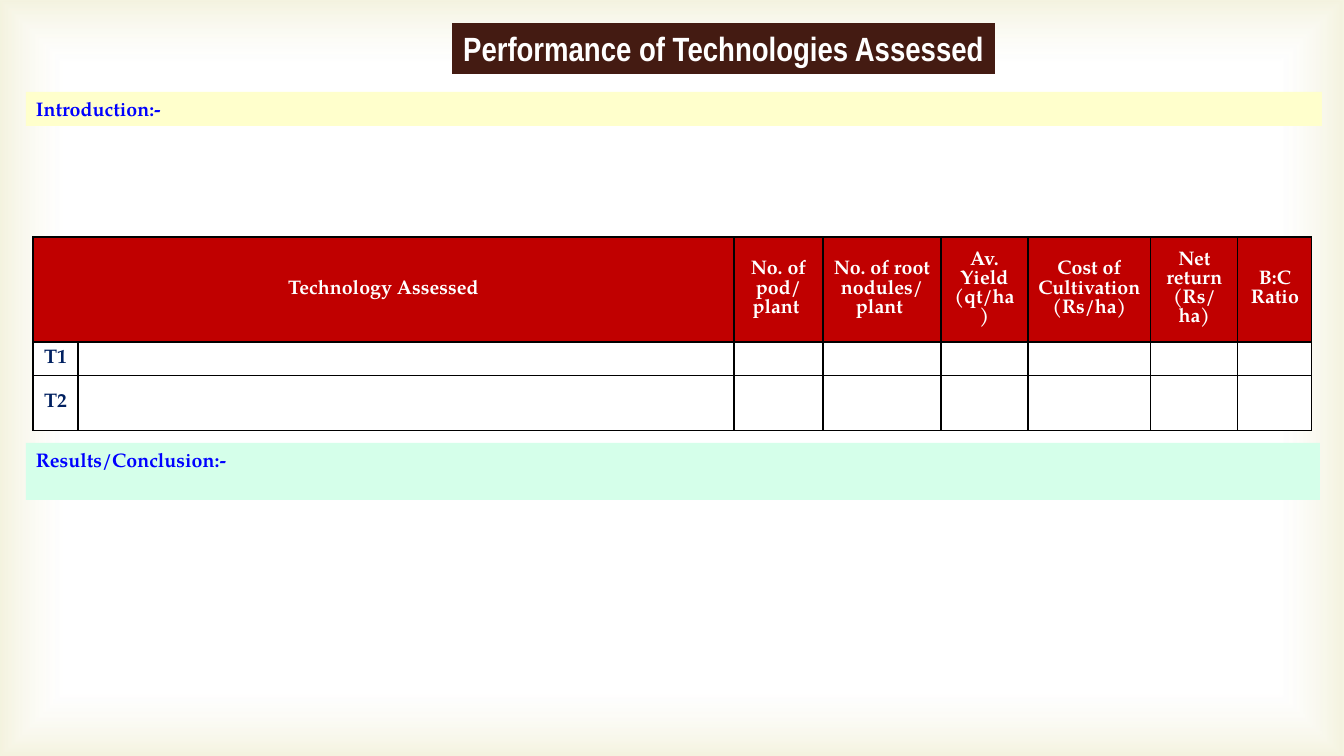
import pptx
import pptx.util
import pptx.oxml
import pptx.oxml.ns
import pptx.dml.color
import pptx.enum.text
import pptx.enum.shapes

RGB = pptx.dml.color.RGBColor
ALIGN = pptx.enum.text.PP_ALIGN
ANCHOR = pptx.enum.text.MSO_ANCHOR
WHITE = RGB(0xFF, 0xFF, 0xFF)
BLACK = RGB(0, 0, 0)
BROWN = RGB(0x44, 0x1B, 0x12)
CREAM = RGB(0xFF, 0xFF, 0xCC)
MINT = RGB(0xD5, 0xFF, 0xEA)
BLUE = RGB(0, 0, 0xFF)
NAVY = RGB(0, 0x20, 0x60)
RED = RGB(0xC0, 0, 0)
SAND = RGB(0xD1, 0xCA, 0x75)
SERIF = "TeX Gyre Pagella"
NS = pptx.oxml.ns.nsdecls("a")
WIDE, HIGH = 1344, 756

COLS = [45, 656, 89, 118, 87, 123, 87, 74]
ROWS = [105, 33, 55]
HEADS = ["Technology Assessed", "", "No. of pod/ plant ",
         "No. of root nodules/ plant ", "Av. Yield (qt/ha)",
         "Cost of Cultivation (Rs/ha)", "Net return\n(Rs/ha)", "B:C Ratio"]
NAMES = ["T1 ", "T2"]


def px(num):
    return pptx.util.Emu(round(num * 12192000 / WIDE))


def place(shape, left, top, width, height):
    shape.left, shape.top = px(left), px(top)
    shape.width, shape.height = px(width), px(height)


def paint(item, color):
    item.fill.solid()
    item.fill.fore_color.rgb = color


def style(para, color, size=14, name=SERIF, align=ALIGN.CENTER):
    para.alignment = align
    font = para.font
    font.name, font.size, font.bold = name, pptx.util.Pt(size), True
    font.color.rgb = color


def add_glow(slide):
    glow = slide.shapes.add_shape(
        pptx.enum.shapes.MSO_SHAPE.RECTANGLE, 0, 0, px(WIDE), px(HIGH))
    glow.shadow.inherit = False
    glow.line.fill.background()
    stops = "".join(
        f'<a:gs pos="{pos}000"><a:srgbClr val="{color}">'
        f'<a:alpha val="{alpha}000"/></a:srgbClr></a:gs>'
        for pos, color, alpha in [(83, WHITE, 11), (100, SAND, 23)])
    grad = pptx.oxml.parse_xml(
        f'<a:gradFill {NS} rotWithShape="1"><a:gsLst>{stops}</a:gsLst>'
        '<a:path path="rect"><a:fillToRect l="50000" t="50000" '
        'r="50000" b="50000"/></a:path></a:gradFill>')
    props = glow.element.spPr
    props.insert(2, grad)
    slide.shapes.element.insert(2, glow.element)


def add_title(slide, text):
    title = slide.shapes.title
    place(title, 452, 23, 543, 51)
    paint(title, BROWN)
    frame = title.text_frame
    frame.text = text
    frame.word_wrap = False
    frame.vertical_anchor = ANCHOR.MIDDLE
    frame.auto_size = pptx.enum.text.MSO_AUTO_SIZE.NONE
    style(frame.paragraphs[0], WHITE, 24, "Arial Narrow")


def add_band(slide, text, box, color, align):
    band = slide.shapes.add_textbox(0, 0, 0, 0)
    place(band, *box)
    paint(band, color)
    frame = band.text_frame
    frame.word_wrap = True
    frame.text = text
    style(frame.paragraphs[0], BLUE, align=align)


def add_edge(cell):
    props = cell._tc.get_or_add_tcPr()
    for pos, side in enumerate("LRTB"):
        props.insert(pos, pptx.oxml.parse_xml(
            f'<a:ln{side} {NS} w="12700"><a:solidFill>'
            f'<a:srgbClr val="{BLACK}"/></a:solidFill></a:ln{side}>'))


def fill_cell(cell, text, back, color):
    cell.text = text
    cell.vertical_anchor = ANCHOR.MIDDLE
    paint(cell, back)
    add_edge(cell)
    for para in cell.text_frame.paragraphs:
        style(para, color)


def add_grid(slide):
    frame = slide.shapes.add_table(
        len(ROWS), len(COLS), px(33), px(237), px(sum(COLS)), px(sum(ROWS)))
    table = frame.table
    for col, width in zip(table.columns, COLS):
        col.width = px(width)
    for row, height in zip(table.rows, ROWS):
        row.height = px(height)
    blank = [""] * (len(COLS) - 1)
    lines = [HEADS] + [[name] + blank for name in NAMES]
    for r, line in enumerate(lines):
        back, color = (WHITE, NAVY) if r else (RED, WHITE)
        for c, text in enumerate(line):
            fill_cell(table.cell(r, c), text, back, color)
    table.cell(0, 0).merge(table.cell(0, 1))


def main():
    """Build the slide of technology results."""
    deck = pptx.Presentation()
    deck.slide_width, deck.slide_height = px(WIDE), px(HIGH)
    slide = deck.slides.add_slide(deck.slide_layouts[5])
    add_glow(slide)
    add_title(slide, "Performance of Technologies Assessed")
    add_band(slide, "Introduction:-", (26, 92, 1296, 34), CREAM, ALIGN.JUSTIFY)
    add_grid(slide)
    add_band(slide, "Results/Conclusion:-", (26, 443, 1294, 57), MINT, ALIGN.LEFT)
    deck.save("out.pptx")


if __name__ == "__main__":
    main()
